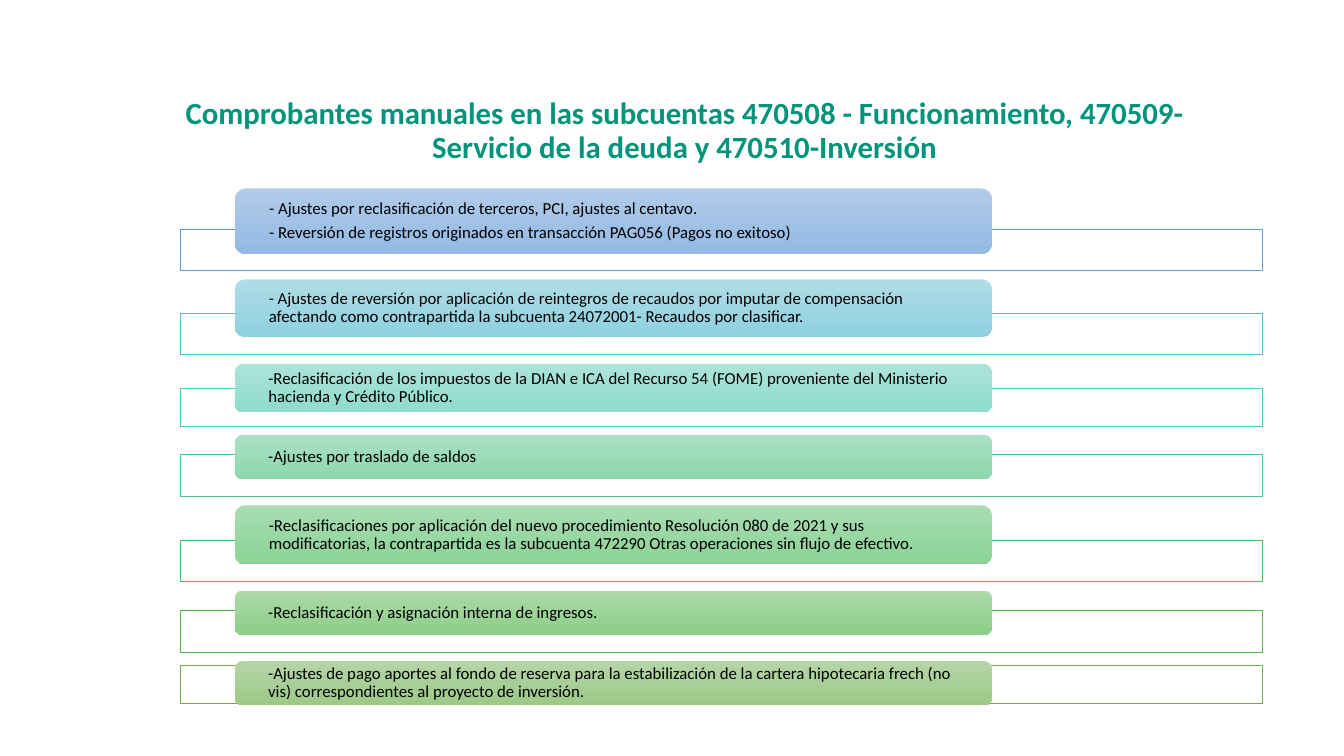
from dataclasses import dataclass

from lxml import etree
from pptx import Presentation
from pptx.dml.color import RGBColor
from pptx.enum.shapes import MSO_SHAPE
from pptx.enum.text import MSO_ANCHOR, PP_ALIGN
from pptx.oxml.ns import qn
from pptx.util import Pt

RECT, ROUND = MSO_SHAPE.RECTANGLE, MSO_SHAPE.ROUNDED_RECTANGLE
MIDDLE = MSO_ANCHOR.MIDDLE
LEFT, CENTER = PP_ALIGN.LEFT, PP_ALIGN.CENTER
TITLE_ONLY = 5


# Colours and type sizes
@dataclass(frozen=True)
class Theme:
    font: str = "Calibri"
    head: str = "00947A"
    ink: str = "000000"
    paper: str = "FFFFFF"
    head_size: float = 22
    text_size: float = 12


THEME = Theme()


# One list item: a filled tab in front of an outlined bar
@dataclass(frozen=True)
class Item:
    tab_top: float
    tab_high: float
    bar_top: float
    bar_high: float
    edge: str
    light: str
    dark: str
    lines: tuple[str, ...]


BAR_LEFT, BAR_WIDE = 128.9, 772.6
TAB_LEFT, TAB_WIDE = 167.8, 540.7
TAB_PAD = 22.2

HEAD = ("Comprobantes manuales en las subcuentas 470508 - Funcionamiento, "
        "470509-Servicio de la deuda y 470510-Inversión")

ITEMS = (
    Item(134.6, 46.8, 163.6, 29.5, "5B9BD5", "B1CBE9", "93B9E4", (
        "- Ajustes por reclasificación de terceros, PCI, ajustes al centavo.",
        "- Reversión de registros originados en transacción PAG056 "
        "(Pagos no exitoso)")),
    Item(199.6, 41, 223.8, 29.5, "56BCD0", "AFDCE6", "90D1E0", (
        "- Ajustes de reversión por aplicación de reintegros de recaudos por "
        "imputar de compensación afectando como contrapartida la subcuenta "
        "24072001- Recaudos por clasificar.",)),
    Item(259.9, 34.6, 277.2, 27.4, "52CAB8", "ADE3D9", "8EDCCE", (
        "-Reclasificación de los impuestos de la DIAN e ICA del Recurso 54 "
        "(FOME) proveniente del Ministerio hacienda y Crédito Público.",)),
    Item(310.5, 31.7, 324.7, 29.5, "4DC58D", "ABE0C3", "8CD8AF", (
        "-Ajustes por traslado de saldos",)),
    Item(360.9, 42.2, 385.9, 29.5, "49BF64", "AADCB2", "8AD396", (
        "-Reclasificaciones por aplicación del nuevo procedimiento Resolución "
        "080 de 2021 y sus modificatorias, la contrapartida es la subcuenta "
        "472290 Otras operaciones sin flujo de efectivo.",)),
    Item(421.9, 31.7, 436.2, 29.5, "50B846", "ABD9A8", "8DCE88", (
        "-Reclasificación y asignación interna de ingresos.",)),
    Item(472.2, 31.7, 475.2, 27.4, "70AD47", "B5D5A7", "9CC987", (
        "-Ajustes de pago aportes al fondo de reserva para la estabilización "
        "de la cartera hipotecaria frech (no vis) correspondientes al "
        "proyecto de inversión.",)),
)


def rgb(code: str) -> RGBColor:
    return RGBColor.from_string(code)


def write(shape, lines: tuple[str, ...], *, size: float, color: str,
          bold: bool = False, align=LEFT, pad: float = 7.2,
          rim: float = 0, after: float = 0) -> None:
    frame = shape.text_frame
    frame.word_wrap = True
    frame.vertical_anchor = MIDDLE
    frame.margin_left = frame.margin_right = Pt(pad)
    frame.margin_top = frame.margin_bottom = Pt(rim)
    for i, line in enumerate(lines):
        para = frame.paragraphs[0] if i == 0 else frame.add_paragraph()
        para.alignment = align
        para.line_spacing = 0.9
        para.space_before = Pt(0)
        para.space_after = Pt(after)
        run = para.add_run()
        run.text = line
        font = run.font
        font.name, font.size, font.bold = THEME.font, Pt(size), bold
        font.color.rgb = rgb(color)


def add_box(slide, kind, left: float, top: float, wide: float, high: float):
    box = slide.shapes.add_shape(kind, Pt(left), Pt(top), Pt(wide), Pt(high))
    box.shadow.inherit = False
    return box


def draw_bar(slide, item: Item) -> None:
    bar = add_box(slide, RECT, BAR_LEFT, item.bar_top, BAR_WIDE, item.bar_high)
    bar.fill.solid()
    bar.fill.fore_color.rgb = rgb(THEME.paper)
    tint = bar.element.spPr.find(qn("a:solidFill"))[0]
    etree.SubElement(tint, qn("a:alpha"), val="90000")
    bar.line.color.rgb = rgb(item.edge)
    bar.line.width = Pt(0.5)


def draw_tab(slide, item: Item) -> None:
    tab = add_box(slide, ROUND, TAB_LEFT, item.tab_top, TAB_WIDE, item.tab_high)
    tab.fill.gradient()
    tab.fill.gradient_angle = 270
    for stop, code in zip(tab.fill.gradient_stops, (item.light, item.dark)):
        stop.color.rgb = rgb(code)
    tab.line.fill.background()
    write(tab, item.lines, size=THEME.text_size, color=THEME.ink,
          pad=TAB_PAD, after=4.2)


def main() -> None:
    deck = Presentation()
    deck.slide_width, deck.slide_height = Pt(960), Pt(540)
    slide = deck.slides.add_slide(deck.slide_layouts[TITLE_ONLY])

    # Title
    title = slide.shapes.title
    title.left, title.top = Pt(110.2), Pt(66.2)
    title.width, title.height = Pt(757.4), Pt(55.4)
    write(title, (HEAD,), size=THEME.head_size, color=THEME.head,
          bold=True, align=CENTER, rim=3.6)

    # List
    for item in ITEMS:
        draw_bar(slide, item)
        draw_tab(slide, item)

    deck.save("out.pptx")


if __name__ == "__main__":
    main()
